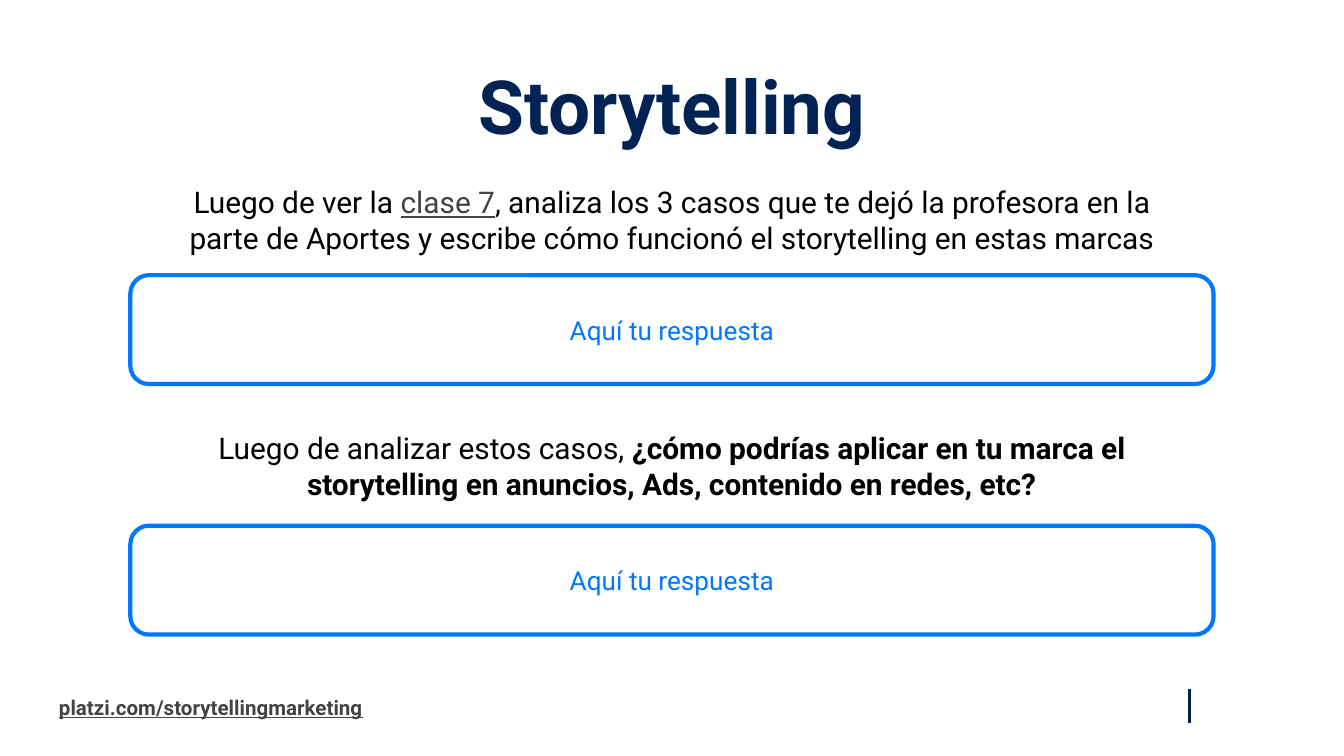
"""Builds the storytelling exercise slide; positions are percentages of its size."""
from lxml import etree
from pptx import Presentation
from pptx.dml.color import RGBColor
from pptx.enum.shapes import MSO_CONNECTOR, MSO_SHAPE
from pptx.enum.text import MSO_ANCHOR, PP_ALIGN
from pptx.oxml.ns import qn
from pptx.util import Inches, Pt

LEFT, CENTER = PP_ALIGN.LEFT, PP_ALIGN.CENTER
TOP, MIDDLE = MSO_ANCHOR.TOP, MSO_ANCHOR.MIDDLE
ROUNDED = MSO_SHAPE.ROUNDED_RECTANGLE
STRAIGHT = MSO_CONNECTOR.STRAIGHT
WIDTH = 10
HEIGHT = WIDTH * 9 / 16
FONT = "Roboto"
NAVY, BLUE, GRAY, BLACK = "012354", "0077FF", "434343", "000000"


def rgb(value):
    """Turn a hex string into a colour."""
    return RGBColor.from_string(value)


def x(share):
    """Convert a percentage of the slide width to a length."""
    return Inches(WIDTH * share / 100)


def y(share):
    """Convert a percentage of the slide height to a length."""
    return Inches(HEIGHT * share / 100)


def centered(top, width, height):
    """Return the bounds of a box centred across the slide."""
    return x((100 - width) / 2), y(top), x(width), y(height)


def add_run(p, text, size=16, color=BLACK, bold=False, underline=False):
    """Append a formatted run to a paragraph."""
    r = p.add_run()
    r.text = text
    r.font.name, r.font.size = FONT, Pt(size)
    r.font.bold, r.font.underline = bold, underline
    r.font.color.rgb = rgb(color)


def fill_text(sp, paragraphs, align=CENTER, anchor=MIDDLE, spacing=None):
    """Write paragraphs, each a list of (text, format) runs, into a shape."""
    tf = sp.text_frame
    tf.word_wrap = True
    tf.vertical_anchor = anchor
    tf.margin_left = tf.margin_right = Inches(0.1)
    tf.margin_top = tf.margin_bottom = Inches(0.1)
    for i, runs in enumerate(paragraphs):
        p = tf.add_paragraph() if i else tf.paragraphs[0]
        p.alignment = align
        p.line_spacing = spacing
        for text, style in runs:
            add_run(p, text, **style)


def add_text(s, bounds, paragraphs, **layout):
    """Add a text box."""
    fill_text(s.shapes.add_textbox(*bounds), paragraphs, **layout)


def add_answer(s, top):
    """Add a rounded answer field."""
    sp = s.shapes.add_shape(ROUNDED, *centered(top, 80.6, 14.4))
    sp.adjustments[0] = 0.17
    sp.shadow.inherit = False
    sp.fill.background()
    sp.line.color.rgb = rgb(BLUE)
    sp.line.width = Pt(2.25)
    fill_text(sp, [[("Aquí tu respuesta", dict(size=14, color=BLUE))]])


def add_rule(s, left, top, bottom):
    """Add a vertical rule."""
    line = s.shapes.add_connector(STRAIGHT, x(left), y(top), x(left), y(bottom))
    line.line.color.rgb = rgb(NAVY)
    line.line.width = Pt(1.5)
    etree.SubElement(line._element.spPr, qn("a:effectLst"))


def main():
    """Build and save the slide."""
    prs = Presentation()
    prs.slide_width, prs.slide_height = x(100), y(100)
    s = prs.slides.add_slide(prs.slide_layouts[6])
    bold = dict(bold=True)

    add_text(s, (x(3.4), y(90.49), x(31.1), y(6.04)),
             [[("platzi.com/storytellingmarketing",
                dict(size=11, color=GRAY, bold=True, underline=True))]],
             align=LEFT)
    add_rule(s, 88.5, 91.2, 95.64)
    add_text(s, centered(8.5, 93.2, 11.2),
             [[("Storytelling", dict(size=40, color=NAVY, bold=True))]],
             anchor=TOP, spacing=0.8)
    add_text(s, centered(22.58, 77, 12.98), [[
        ("Luego de ver la ", {}),
        ("clase 7", dict(color=GRAY, underline=True)),
        (", analiza los 3 casos que te dejó la profesora en la parte de "
         "Aportes y escribe cómo funcionó el storytelling en estas marcas", {}),
    ]])
    add_answer(s, 36.4)
    add_text(s, centered(55.11, 73.6, 12.98), [
        [("Luego de analizar estos casos, ", {}),
         ("¿cómo podrías aplicar en tu marca el", bold)],
        [("storytelling en anuncios, Ads, contenido en redes, etc?", bold)],
    ])
    add_answer(s, 69.54)
    prs.save("out.pptx")


if __name__ == "__main__":
    main()
